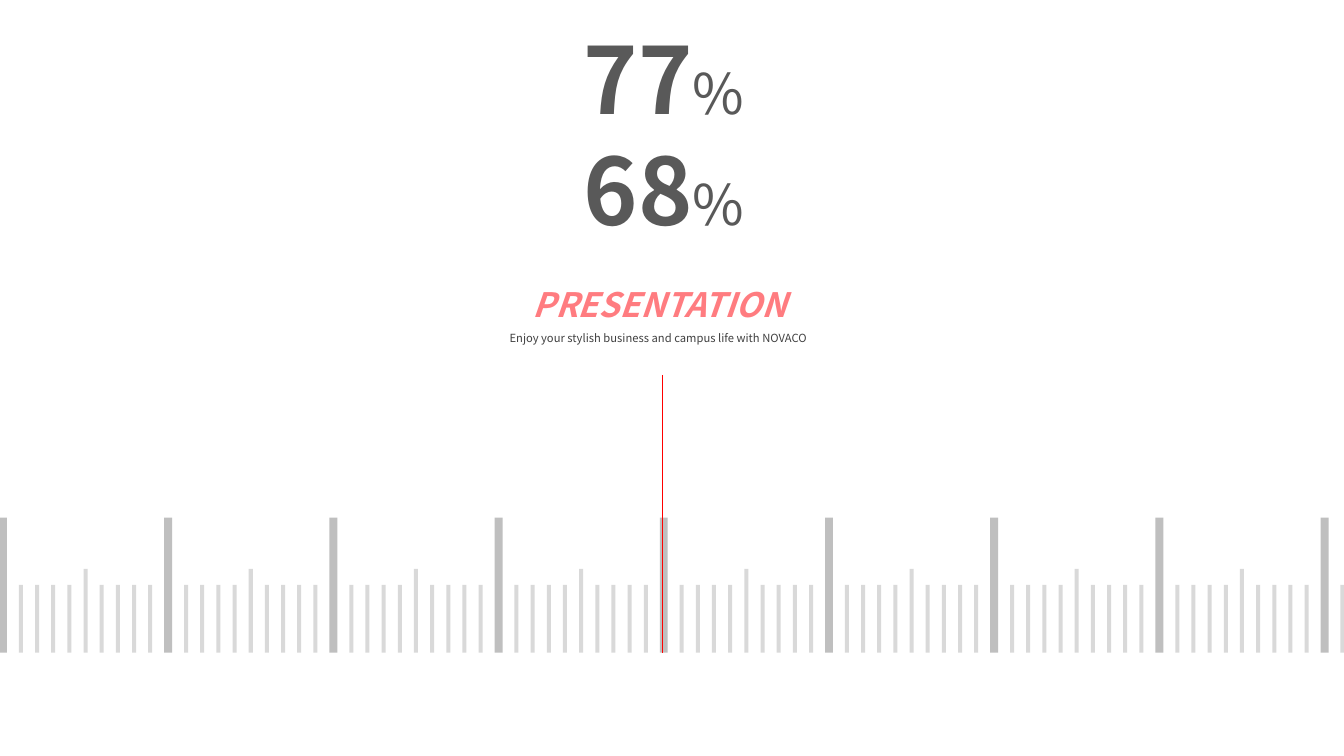
from dataclasses import dataclass

from lxml import etree
from pptx import Presentation
from pptx.dml.color import RGBColor
from pptx.enum.shapes import MSO_CONNECTOR, MSO_SHAPE
from pptx.enum.text import MSO_ANCHOR, MSO_AUTO_SIZE, PP_ALIGN
from pptx.oxml.ns import qn
from pptx.util import Pt


@dataclass(frozen=True)
class Theme:
    font: str = "Noto Sans CJK KR"
    figure: str = "595959"
    heading: str = "FF7C80"
    caption: str = "404040"
    major_tick: str = "BFBFBF"
    minor_tick: str = "D9D9D9"
    needle: str = "FF0000"
    figure_size: int = 66
    percent_size: int = 40
    heading_size: int = 24
    caption_size: int = 8


THEME = Theme()

# Ruler geometry in points
RULER_BOTTOM = 466.2
MAJOR_PITCH = 118
MINOR_PITCH = 11.55
FIRST_MAJOR = -0.7
FIRST_MINOR = 14.2  # offset from the major tick
MAJOR_COUNT = 9
PAGE_WIDTH = 960


def style(font, size, color, bold=False, italic=False):
    font.name = THEME.font
    font.size = Pt(size)
    font.color.rgb = RGBColor.from_string(color)
    font.bold = bold
    font.italic = italic


def prepare_frame(frame):
    frame.word_wrap = True
    frame.auto_size = MSO_AUTO_SIZE.NONE
    frame.vertical_anchor = MSO_ANCHOR.TOP
    frame.margin_left = frame.margin_right = Pt(7.2)
    frame.margin_top = frame.margin_bottom = Pt(3.6)


def add_figures(page, values):
    box = page.shapes.add_textbox(Pt(398.9), Pt(12.2), Pt(150.5), Pt(167))
    frame = box.text_frame
    prepare_frame(frame)
    for index, value in enumerate(values):
        para = frame.add_paragraph() if index else frame.paragraphs[0]
        para.alignment = PP_ALIGN.CENTER
        for text, size, bold in ((value, THEME.figure_size, True),
                                 ("%", THEME.percent_size, False)):
            span = para.add_run()
            span.text = text
            style(span.font, size, THEME.figure, bold)


def fill_title(page, heading, caption):
    title = page.shapes.title
    title.left, title.top = Pt(254.2), Pt(185)
    title.width, title.height = Pt(434.2), Pt(67)
    frame = title.text_frame
    prepare_frame(frame)
    first, second = frame.paragraphs[0], frame.add_paragraph()
    first.text, second.text = heading, caption
    style(first.font, THEME.heading_size, THEME.heading, True, True)
    style(second.font, THEME.caption_size, THEME.caption)
    for para in (first, second):
        para.alignment = PP_ALIGN.CENTER
        para.line_spacing = 1.5


def add_tick(page, left, width, height, color):
    tick = page.shapes.add_shape(MSO_SHAPE.RECTANGLE, Pt(left), Pt(RULER_BOTTOM - height),
                                 Pt(width), Pt(height))
    tick.shadow.inherit = False
    tick.fill.solid()
    tick.fill.fore_color.rgb = RGBColor.from_string(color)
    tick.line.fill.background()


def add_ruler(page):
    for major in range(MAJOR_COUNT):
        left = FIRST_MAJOR + major * MAJOR_PITCH
        add_tick(page, left, 5.7, 96.5, THEME.major_tick)
        for minor in range(9):
            minor_left = left + FIRST_MINOR + minor * MINOR_PITCH
            if minor_left < PAGE_WIDTH:
                height = 59.8 if minor == 4 else 48.4  # the half mark is taller
                add_tick(page, minor_left, 2.9, height, THEME.minor_tick)


def add_needle(page):
    needle = page.shapes.add_connector(MSO_CONNECTOR.STRAIGHT, Pt(473), Pt(267.8),
                                       Pt(473), Pt(RULER_BOTTOM))
    needle.line.color.rgb = RGBColor.from_string(THEME.needle)
    needle.line.width = Pt(0.5)
    etree.SubElement(needle._element.spPr, qn("a:effectLst"))


def main():
    deck = Presentation()
    deck.slide_width, deck.slide_height = Pt(PAGE_WIDTH), Pt(540)
    page = deck.slides.add_slide(deck.slide_layouts[5])

    # Percentages and heading
    add_figures(page, ("77", "68"))
    fill_title(page, "PRESENTATION",
               "Enjoy your stylish business and campus life with NOVACO ")

    # Scale with its pointer
    add_ruler(page)
    add_needle(page)

    deck.save("out.pptx")


if __name__ == "__main__":
    main()
